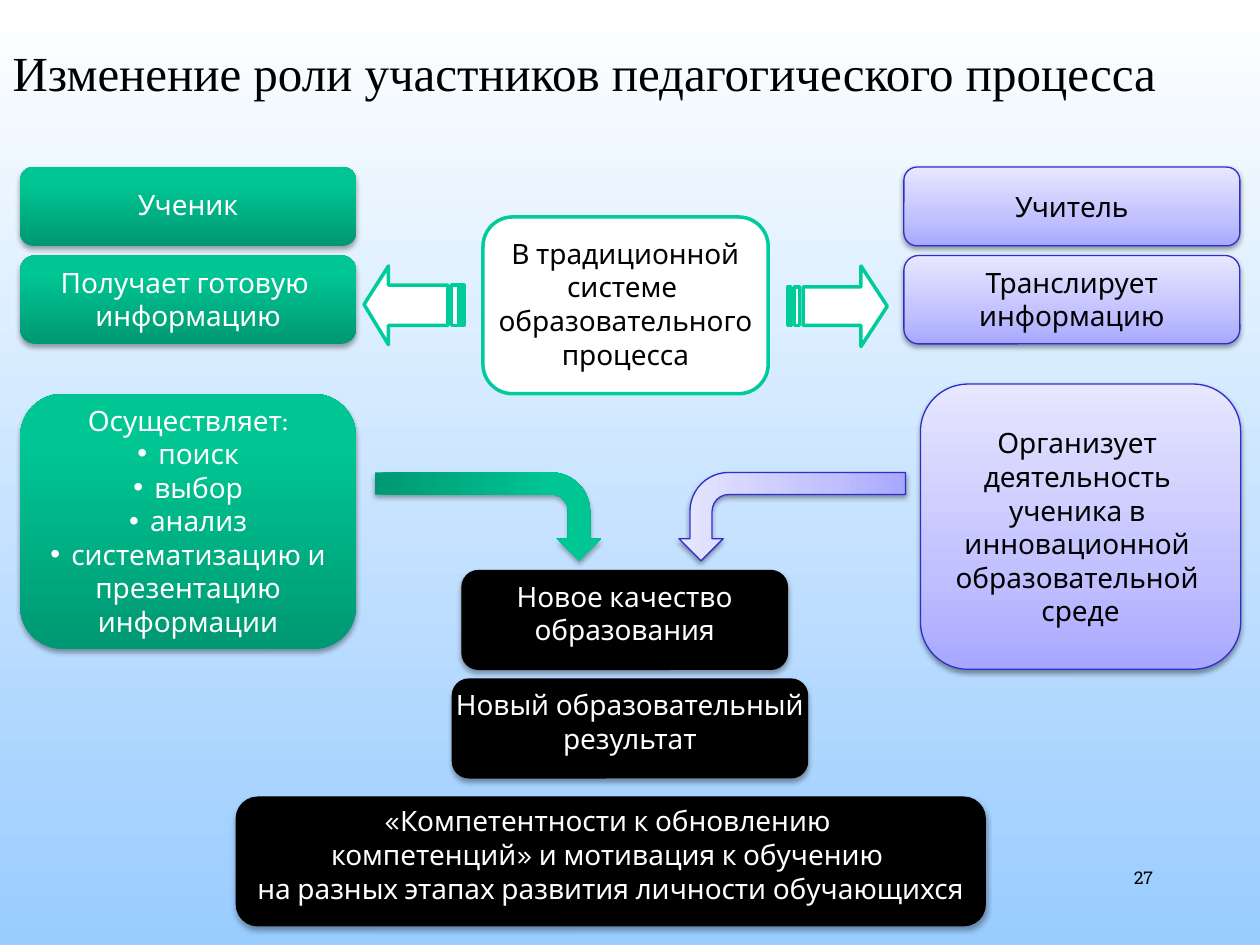
from dataclasses import dataclass

from lxml.etree import SubElement
from pptx import Presentation
from pptx.dml.color import RGBColor as Rgb
from pptx.enum.shapes import MSO_SHAPE as Shape
from pptx.enum.text import MSO_ANCHOR as Anchor, PP_ALIGN as Align
from pptx.oxml.ns import qn
from pptx.util import Pt

COLORS = {
    "black": "000000", "white": "FFFFFF", "sky": "99CCFF", "outline": "00CC99",
    "green_dark": "009872", "green_mid": "00C694", "green_light": "00C795",
    "lilac_dark": "A7A7FF", "lilac_mid": "C1C1FF", "lilac_light": "E7E7FF",
    "lilac_line": "2E2ECB",
}
BODY_FONT = "Karla"


@dataclass(frozen=True)
class Style:
    stops: tuple
    text: str
    line: str = ""
    line_width: float = 0.75
    shadow: tuple = ()


@dataclass(frozen=True)
class Card:
    box: tuple
    style: Style
    lines: tuple
    bullets: tuple = ()
    lift: float = 0


SHADE = (35, 1.8)
STUDENT = Style(((0, "green_dark"), (80, "green_mid"), (100, "green_light")), "white", shadow=SHADE)
TEACHER = Style(((0, "lilac_dark"), (35, "lilac_mid"), (100, "lilac_light")), "black",
                "lilac_line", shadow=(38, 1.6))
RESULT = Style(((0, "black"),), "white", "black", shadow=SHADE)
SYSTEM = Style(((0, "white"),), "black", "outline", 2)

COLUMN_W = 192
STUDENT_X, TEACHER_X = 11.5, 516.5
ROLE_Y, ROLE_H = 95.5, 45
TASK_Y, TASK_H = 146, 50.5

CARDS = (
    Card((276, 124, 163, 101), SYSTEM,
         ("В традиционной", "системе ", "образовательного", "процесса"), lift=1),
    Card((526, 219.5, 183, 163), TEACHER,
         ("Организует ", "деятельность ", "ученика в ", "инновационной ",
          "образовательной ", "среде")),
    Card((TEACHER_X, ROLE_Y, COLUMN_W, ROLE_H), TEACHER, ("Учитель",)),
    Card((TEACHER_X, TASK_Y, COLUMN_W, TASK_H), TEACHER, ("Транслирует", "информацию"), lift=0.5),
    Card((STUDENT_X, ROLE_Y, COLUMN_W, ROLE_H), STUDENT, ("Ученик",), lift=1),
    Card((STUDENT_X, TASK_Y, COLUMN_W, TASK_H), STUDENT,
         ("Получает готовую ", "информацию"), lift=0.5),
    Card((STUDENT_X, 225, COLUMN_W, 146), STUDENT,
         ("Осуществляет:", "поиск", "выбор", "анализ", "систематизацию и",
          "презентацию", "информации"), bullets=(1, 2, 3, 4), lift=0.5),
    Card((264, 326, 186, 56.5), RESULT, ("Новое качество", "образования"), lift=4),
    Card((258.5, 388, 203, 56.5), RESULT, ("Новый образовательный", "результат"), lift=4),
    Card((135, 455.5, 428, 73.5), RESULT,
         ("«Компетентности к обновлению ", "компетенций» и мотивация к обучению ",
          "на разных этапах развития личности обучающихся"), lift=4),
)


def rgb(name: str) -> Rgb:
    return Rgb.from_string(COLORS[name])


def paint(fill, stops: tuple, angle: int = 90) -> None:
    if len(stops) == 1:
        fill.solid()
        fill.fore_color.rgb = rgb(stops[0][1])
        return
    fill.gradient()
    fill.gradient_angle = angle
    stop_list = fill._xPr.find(qn("a:gradFill")).find(qn("a:gsLst"))
    for old_stop in list(stop_list):
        stop_list.remove(old_stop)
    for position, name in stops:
        stop = SubElement(stop_list, qn("a:gs"), pos=str(position * 1000))
        SubElement(stop, qn("a:srgbClr"), val=COLORS[name])


def apply_style(shape, style: Style) -> None:
    paint(shape.fill, style.stops)
    if style.line:
        shape.line.color.rgb = rgb(style.line)
        shape.line.width = Pt(style.line_width)
    else:
        shape.line.fill.background()
    shape.shadow.inherit = False
    if style.shadow:
        opacity, distance = style.shadow
        effects = shape._element.spPr.find(qn("a:effectLst"))
        shadow = SubElement(effects, qn("a:outerShdw"), blurRad=str(Pt(3.1)),
                            dist=str(Pt(distance)), dir="5400000", rotWithShape="0")
        shade = SubElement(shadow, qn("a:srgbClr"), val=COLORS["black"])
        SubElement(shade, qn("a:alpha"), val=str(opacity * 1000))


def write(frame, lines: tuple, *, size: float = 16, font: str = BODY_FONT,
          color: str = "black", align=Align.CENTER, anchor=Anchor.MIDDLE,
          wrap: bool = False, bullets: tuple = (), lift: float = 0) -> None:
    frame.word_wrap = wrap
    frame.vertical_anchor = anchor
    frame.margin_bottom = Pt(3.6 + 2 * lift)
    for index, line in enumerate(lines):
        paragraph = frame.paragraphs[0] if index == 0 else frame.add_paragraph()
        paragraph.alignment = align
        run = paragraph.add_run()
        run.text = line
        run.font.size = Pt(size)
        run.font.name = font
        run.font.color.rgb = rgb(color)
        if index in bullets:
            properties = paragraph._p.get_or_add_pPr()
            properties.set("marL", str(Pt(12)))
            properties.set("indent", str(Pt(-12)))
            SubElement(properties, qn("a:buFont"), typeface="Arial")
            SubElement(properties, qn("a:buChar"), char="•")


def draw_card(shapes, card: Card) -> None:
    shape = shapes.add_shape(Shape.ROUNDED_RECTANGLE, *map(Pt, card.box))
    apply_style(shape, card.style)
    write(shape.text_frame, card.lines, color=card.style.text,
          bullets=card.bullets, lift=card.lift)


def draw_striped_arrow(shapes, tail: float, top: float, direction: int) -> None:
    height, shaft_top, shaft_bottom = 45.5, 11.5, 34
    neck, tip = 42.5, 57
    stripes = [[(left, shaft_top), (left, shaft_bottom), (right, shaft_bottom), (right, shaft_top)]
               for left, right in ((0, 1.75), (3.5, 7))]
    body = [(neck, 0), (neck, shaft_top), (8.75, shaft_top), (8.75, shaft_bottom),
            (neck, shaft_bottom), (neck, height), (tip, height / 2)]
    outlines = [[(tail + direction * x, top + y) for x, y in outline]
                for outline in (body, *stripes)]
    builder = shapes.build_freeform(*outlines[0][0], scale=float(Pt(1)))
    builder.add_line_segments(outlines[0][1:], close=True)
    for outline in outlines[1:]:
        builder.move_to(*outline[0])
        builder.add_line_segments(outline[1:], close=True)
    apply_style(builder.convert_to_shape(), SYSTEM)


def draw_bent_arrow(shapes, left: float, style: Style, mirrored: bool) -> None:
    arrow = shapes.add_shape(Shape.BENT_ARROW, Pt(left), Pt(230.5), Pt(50.5), Pt(129.5))
    arrow.rotation = 90
    if mirrored:
        arrow._element.spPr.xfrm.set("flipV", "1")
    apply_style(arrow, style)


def main() -> None:
    deck = Presentation()
    deck.slide_width, deck.slide_height = Pt(720), Pt(540)
    slide = deck.slides.add_slide(deck.slide_layouts[5])
    paint(slide.background.fill, ((0, "white"), (100, "sky")), angle=270)
    shapes = slide.shapes

    title = shapes.title
    title.left, title.top, title.width, title.height = map(Pt, (0, -4, 731.5, 90))
    write(title.text_frame, ("Изменение роли участников педагогического процесса",),
          size=28, font="Times New Roman", align=Align.LEFT, wrap=True)

    page_number = shapes.add_textbox(*map(Pt, (516, 492, 150, 36)))
    write(page_number.text_frame, ("27",), size=10, font="Roboto Slab",
          align=Align.RIGHT, anchor=Anchor.TOP, wrap=True)

    for card in CARDS:
        draw_card(shapes, card)
    draw_striped_arrow(shapes, tail=265, top=151.5, direction=-1)
    draw_striped_arrow(shapes, tail=450, top=152, direction=1)
    draw_bent_arrow(shapes, 253.5, STUDENT, mirrored=False)
    draw_bent_arrow(shapes, 427.5, TEACHER, mirrored=True)
    deck.save("out.pptx")


if __name__ == "__main__":
    main()
